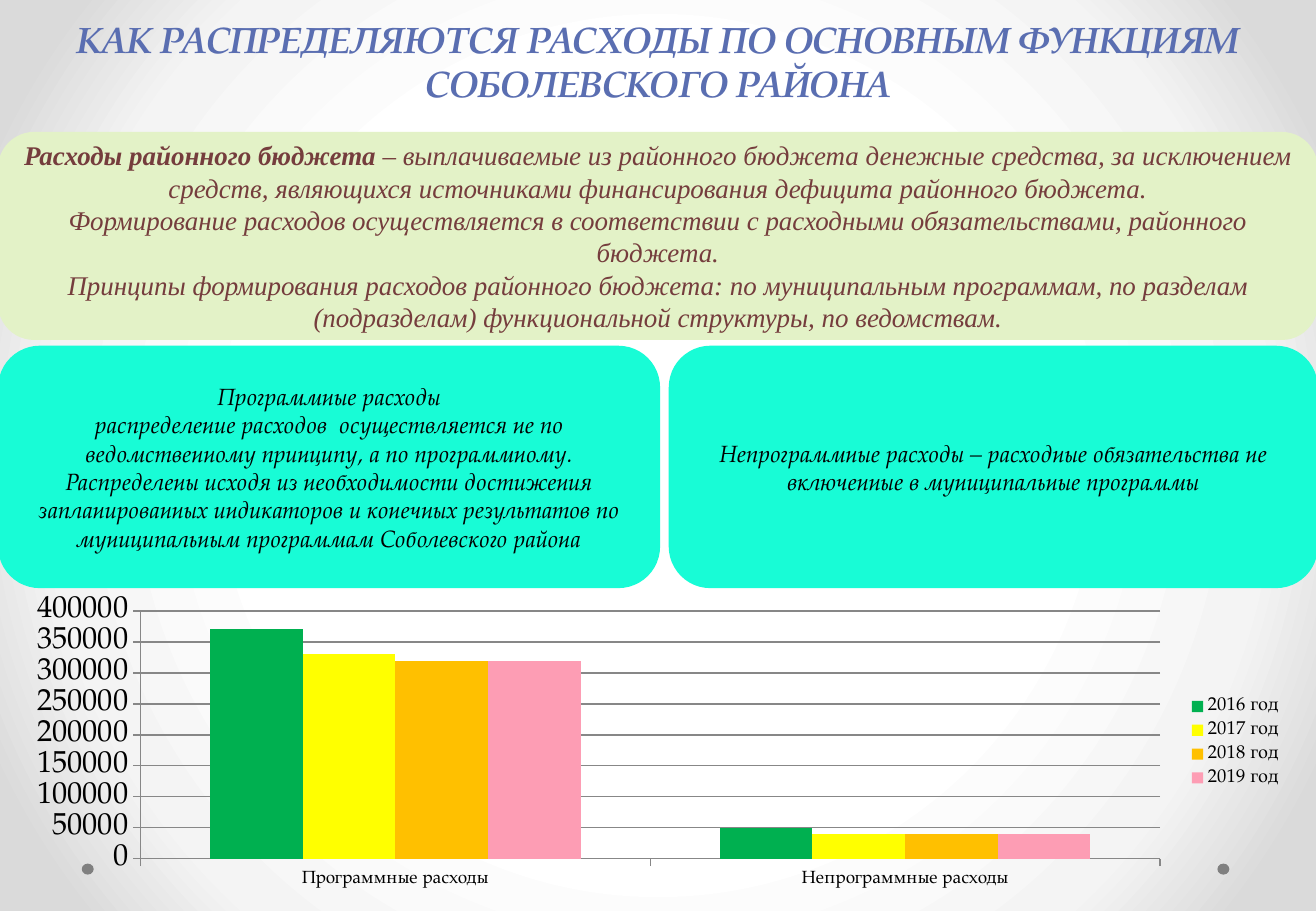
import pptx
import pptx.chart.data
import pptx.dml.color
import pptx.enum.chart
import pptx.enum.shapes
import pptx.enum.text
import pptx.oxml
import pptx.oxml.ns
import pptx.util
from pptx.util import Cm, Pt

SERIF = "TeX Gyre Pagella"
TIMES = "Times New Roman"
COLORS = {
    "title": "5A6EB1", "definition": "E3F2C7", "brown": "753D3D",
    "turquoise": "18FCD6", "black": "000000", "dot": "808080", "grid": "878787",
    "2016 год": "00B050", "2017 год": "FFFF00",
    "2018 год ": "FFC000", "2019 год": "FD9DB4",
}


def color(name):
    return pptx.dml.color.RGBColor.from_string(COLORS[name])


def write(shape, paragraphs, font, size, ink):
    """Fill a shape with centred italic paragraphs, each a list of (text, bold) runs."""
    frame = shape.text_frame
    frame.word_wrap = True
    for index, runs in enumerate(paragraphs):
        para = frame.paragraphs[0] if index == 0 else frame.add_paragraph()
        para.alignment = pptx.enum.text.PP_ALIGN.CENTER
        for text, bold in runs:
            span = para.add_run()
            span.text = text
            span.font.name = font
            span.font.size = Pt(size)
            span.font.bold = bold
            span.font.italic = True
            span.font.color.rgb = color(ink)


deck = pptx.Presentation()
deck.slide_width, deck.slide_height = Cm(27.51), Cm(19.05)
page = deck.slides.add_slide(deck.slide_layouts[5])

# Background: radial gradient, white in the centre
page.background.fill.gradient()
gradient = page.element.find(".//" + pptx.oxml.ns.qn("a:gradFill"))
stops = "".join(
    f'<a:gs pos="{position}000"><a:srgbClr val="{shade}"/></a:gs>'
    for position, shade in [(50, "FFFFFF"), (76, "F4F4F4"), (92, "DADADA")])
gradient.getparent().replace(gradient, pptx.oxml.parse_xml(
    f'<a:gradFill {pptx.oxml.ns.nsdecls("a")} rotWithShape="1"><a:gsLst>{stops}</a:gsLst>'
    '<a:path path="circle"><a:fillToRect l="50000" t="50000" r="50000" b="50000"/></a:path>'
    '</a:gradFill>'))

# Corner dots
for left in (1.71, 25.45):
    dot = page.shapes.add_shape(
        pptx.enum.shapes.MSO_SHAPE.OVAL, Cm(left), Cm(18.06), Cm(0.25), Cm(0.23))
    dot.shadow.inherit = False
    dot.fill.solid()
    dot.fill.fore_color.rgb = color("dot")
    dot.line.fill.background()

# Title
title = page.shapes.title
title.left, title.top, title.width, title.height = Cm(0), Cm(0), Cm(27.51), Cm(2.32)
title.text_frame.vertical_anchor = pptx.enum.text.MSO_ANCHOR.BOTTOM
title.text_frame.auto_size = pptx.enum.text.MSO_AUTO_SIZE.NONE
write(title, [[("КАК РАСПРЕДЕЛЯЮТСЯ РАСХОДЫ ПО ОСНОВНЫМ ФУНКЦИЯМ СОБОЛЕВСКОГО РАЙОНА", True)]],
      SERIF, 21.6, "title")

# Chart of expenditure by year
figures = pptx.chart.data.CategoryChartData()
figures.categories = ["Программные расходы", "Непрограммные расходы"]
for year, values in [("2016 год", (370000, 50000)), ("2017 год", (330000, 40000)),
                     ("2018 год ", (320000, 40000)), ("2019 год", (320000, 40000))]:
    figures.add_series(year, values)
chart = page.shapes.add_chart(
    pptx.enum.chart.XL_CHART_TYPE.COLUMN_CLUSTERED,
    Cm(0.24), Cm(12.33), Cm(26.95), Cm(6.38), figures).chart
chart.has_title = False
chart.font.name = SERIF
chart.font.size = Pt(18)
chart.font.color.rgb = color("black")
chart.has_legend = True
chart.legend.position = pptx.enum.chart.XL_LEGEND_POSITION.RIGHT
chart.legend.include_in_layout = False
chart.legend.font.size = Pt(11)
chart.plots[0].gap_width = 150
chart.plots[0].overlap = 0
chart.plots[0].vary_by_categories = False
for series in chart.plots[0].series:
    series.format.fill.solid()
    series.format.fill.fore_color.rgb = color(series.name)
chart.category_axis.tick_labels.font.size = Pt(10.5)
chart.value_axis.minimum_scale = 0
chart.value_axis.maximum_scale = 400000
chart.value_axis.major_unit = 50000
for lined in (chart.category_axis, chart.value_axis, chart.value_axis.major_gridlines):
    lined.format.line.color.rgb = color("grid")

# Text panels: definition, programme and non-programme expenditure
definition = [
    [("Расходы районного бюджета ", True),
     ("– выплачиваемые из районного бюджета денежные средства, за исключением средств, "
      "являющихся источниками финансирования дефицита районного бюджета.", False)],
    [("Формирование расходов осуществляется в соответствии с расходными обязательствами, "
      "районного бюджета.", False)],
    [("Принципы формирования расходов районного бюджета: по муниципальным программам, "
      "по разделам (подразделам) функциональной структуры, по ведомствам.", False)],
]
programme = [
    [("Программные расходы", False)],
    [("распределение расходов  осуществляется не по ведомственному принципу, а по "
      "программному. Распределены исходя из необходимости достижения запланированных "
      "индикаторов и конечных результатов по муниципальным программам "
      "Соболевского района", False)],
]
other = [[("Непрограммные расходы – расходные обязательства не включенные в "
           "муниципальные программы", False)]]
for left, top, width, height, fill, paragraphs, font, size, ink in [
        (0, 2.8, 27.51, 4.27, "definition", definition, TIMES, 16, "brown"),
        (0, 7.27, 13.76, 4.99, "turquoise", programme, SERIF, 14, "black"),
        (14.02, 7.27, 13.49, 4.99, "turquoise", other, SERIF, 14, "black")]:
    box = page.shapes.add_shape(pptx.enum.shapes.MSO_SHAPE.ROUNDED_RECTANGLE,
                                Cm(left), Cm(top), Cm(width), Cm(height))
    box.shadow.inherit = False
    box.fill.solid()
    box.fill.fore_color.rgb = color(fill)
    box.line.color.rgb = color(fill)
    box.line.width = Pt(2.25)
    box.text_frame.vertical_anchor = pptx.enum.text.MSO_ANCHOR.MIDDLE
    write(box, paragraphs, font, size, ink)

deck.save("out.pptx")
